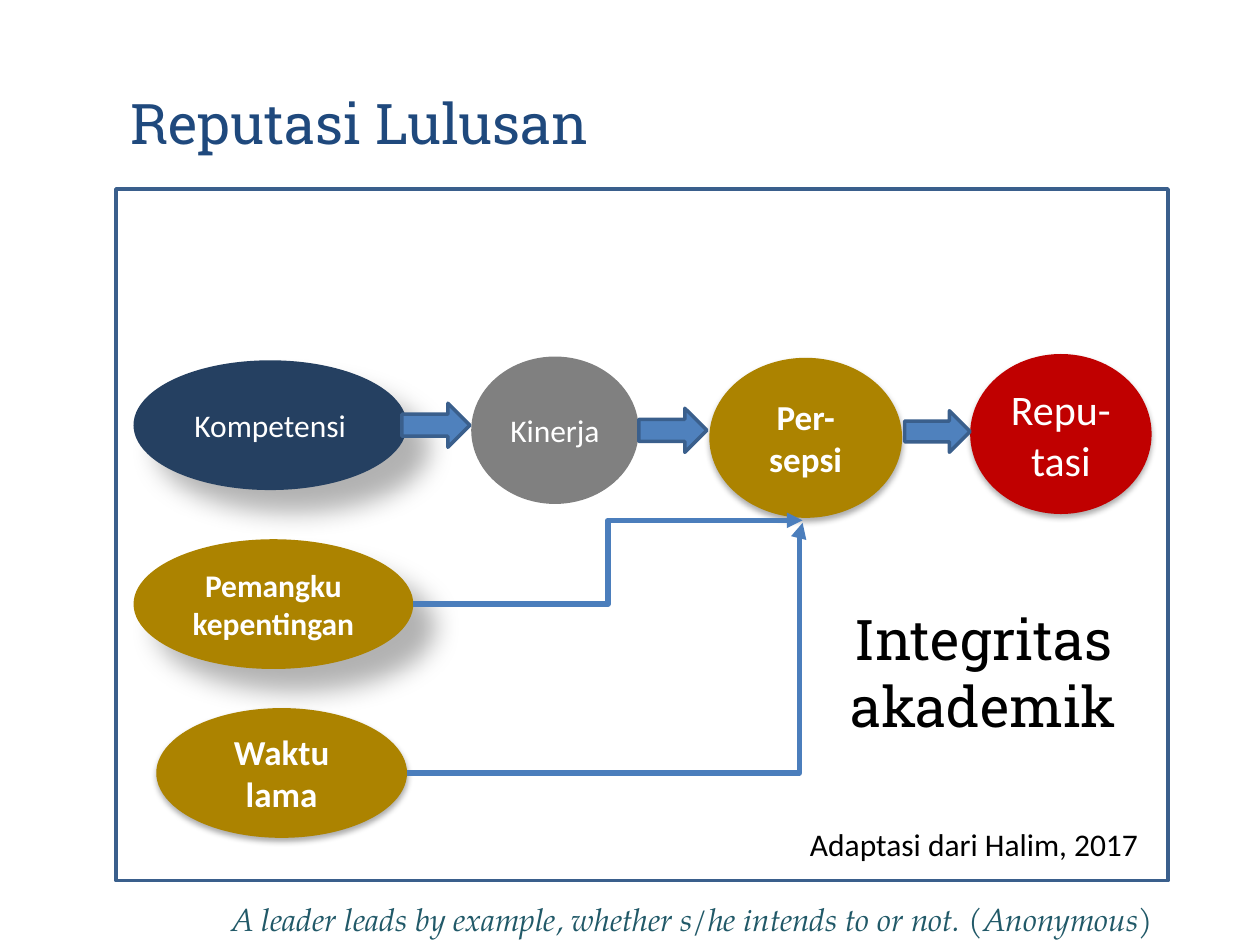
from dataclasses import dataclass

from pptx import Presentation
from pptx.dml.color import RGBColor
from pptx.enum.shapes import MSO_CONNECTOR as Connector, MSO_SHAPE as Shape
from pptx.enum.text import MSO_ANCHOR as Anchor, PP_ALIGN as Align
from pptx.oxml.ns import qn
from pptx.util import Inches, Pt
from lxml.etree import SubElement

SLIDE_WIDTH, SLIDE_HEIGHT = Inches(10), Inches(7.5)
COLUMN, ROW = SLIDE_WIDTH // 100, SLIDE_HEIGHT // 75

WHITE = RGBColor(0xFF, 0xFF, 0xFF)
BLACK = RGBColor(0, 0, 0)
TITLE_BLUE = RGBColor(0x1F, 0x49, 0x7D)
NAVY = RGBColor(0x25, 0x40, 0x61)
GOLD = RGBColor(0xAC, 0x83, 0x00)
GREY = RGBColor(0x80, 0x80, 0x80)
RED = RGBColor(0xC0, 0x00, 0x00)
ARROW_BLUE = RGBColor(0x4F, 0x81, 0xBD)
EDGE_BLUE = RGBColor(0x3A, 0x5F, 0x8C)
LINK_BLUE = RGBColor(0x4B, 0x7E, 0xBC)
TEAL = RGBColor(0x21, 0x59, 0x68)

SANS, SLAB, SERIF = "Calibri", "Roboto Slab", "TeX Gyre Pagella"
# opacity %, blur pt, distance pt, direction in degrees
FAR_SHADOW = (30, 15, 18, 45)
NEAR_SHADOW = (32, 3.5, 2.2, 90)


@dataclass
class Box:
    """An area in grid columns and rows."""
    left: float
    top: float
    width: float
    height: float

    def inner(self, left, top, width, height):
        return Box(self.left + left, self.top + top, width, height)

    def point(self, across, down):
        """The point at the given shares of the width and height."""
        return (self.left + across * self.width, self.top + down * self.height)

    def emu(self):
        return (round(self.left * COLUMN), round(self.top * ROW),
                round(self.width * COLUMN), round(self.height * ROW))


def write(frame, words, size, color, font=SANS, align=Align.LEFT, **styles):
    paragraph = frame.paragraphs[0]
    paragraph.alignment = align
    run = paragraph.add_run()
    run.text = words
    run.font.color.rgb = color
    for key, value in dict(size=Pt(size), name=font, **styles).items():
        setattr(run.font, key, value)
    return paragraph


def add_text(slide, box, words, size, color, wrap=True, anchor=Anchor.TOP, **styles):
    frame = slide.shapes.add_textbox(*box.emu()).text_frame
    frame.word_wrap = wrap
    frame.vertical_anchor = anchor
    return write(frame, words, size, color, **styles)


def add_figure(slide, kind, box, fill=None, edge=None):
    figure = slide.shapes.add_shape(kind, *box.emu())
    figure.shadow.inherit = False
    if fill is None:
        figure.fill.background()
    else:
        figure.fill.solid()
        figure.fill.fore_color.rgb = fill
    if edge is None:
        figure.line.fill.background()
    else:
        figure.line.color.rgb = edge
        figure.line.width = Pt(2)
    return figure


def cast_shadow(figure, opacity, blur, distance, direction):
    effects = figure._element.spPr.find(qn("a:effectLst"))
    shadow = SubElement(effects, qn("a:outerShdw"), blurRad=str(Pt(blur)),
                        dist=str(Pt(distance)), dir=str(direction * 60000),
                        algn="ctr", rotWithShape="0")
    color = SubElement(shadow, qn("a:srgbClr"), val=str(BLACK))
    SubElement(color, qn("a:alpha"), val=str(opacity * 1000))


def add_stage(slide, box, words, size, fill, bold=False, shadow=None):
    stage = add_figure(slide, Shape.OVAL, box, fill)
    if shadow:
        cast_shadow(stage, *shadow)
    stage.text_frame.word_wrap = True
    stage.text_frame.vertical_anchor = Anchor.MIDDLE
    write(stage.text_frame, words, size, WHITE, align=Align.CENTER, bold=bold)


def add_elbow(slide, start, end, bend):
    """Bent arrow that turns at the share `bend` of its width."""
    ends = [round(value * unit) for point in (start, end)
            for value, unit in zip(point, (COLUMN, ROW))]
    elbow = slide.shapes.add_connector(Connector.ELBOW, *ends)
    elbow.line.color.rgb = LINK_BLUE
    elbow.line.width = Pt(3)
    properties = elbow._element.spPr
    SubElement(properties.find(qn("a:ln")), qn("a:tailEnd"), type="triangle")
    SubElement(properties, qn("a:effectLst"))
    adjustments = properties.find(qn("a:prstGeom")).find(qn("a:avLst"))
    SubElement(adjustments, qn("a:gd"), name="adj1", fmla=f"val {round(bend * 100000)}")


def add_reputation_flow(slide, frame):
    add_figure(slide, Shape.RECTANGLE, frame, edge=EDGE_BLUE)

    competence = frame.inner(1.4, 13.6, 21.7, 10.3)
    stakeholders = frame.inner(1.4, 27.8, 22.2, 10.3)
    long_time = frame.inner(3.2, 41.2, 19.9, 10.3)
    performance = frame.inner(28.2, 13.3, 13.3, 11.7)
    perception = frame.inner(47.1, 13.4, 15.3, 12.7)
    reputation = frame.inner(67.8, 13.1, 14.4, 12.7)
    for box, words, size, fill, bold, shadow in (
        (competence, "Kompetensi", 18, NAVY, False, FAR_SHADOW),
        (stakeholders, "Pemangku kepentingan", 18, GOLD, True, FAR_SHADOW),
        (long_time, "Waktu lama", 20, GOLD, True, NEAR_SHADOW),
        (performance, "Kinerja", 18, GREY, False, None),
        (perception, "Per-sepsi", 20, GOLD, True, NEAR_SHADOW),
        (reputation, "Repu-tasi", 24, RED, False, NEAR_SHADOW),
    ):
        add_stage(slide, box, words, size, fill, bold, shadow)

    below_perception = frame.inner(54.5, 26.3, 0, 0.2)
    add_elbow(slide, stakeholders.point(1, 0.5), below_perception.point(0, 0), 0.5)
    add_elbow(slide, long_time.point(1, 0.5), below_perception.point(0, 1), 0.992)

    for arrow in ((22.7, 17, 5.4, 3.5), (41.5, 17.4, 5.4, 3.5), (62.6, 17.6, 5.2, 3.3)):
        add_figure(slide, Shape.RIGHT_ARROW, frame.inner(*arrow), ARROW_BLUE, EDGE_BLUE)

    add_text(slide, frame.inner(55.8, 32.5, 26.1, 11.8), "Integritas akademik", 32,
             BLACK, font=SLAB, align=Align.CENTER)
    add_text(slide, frame.inner(54.1, 50, 28.9, 4), "Adaptasi dari Halim, 2017", 18,
             BLACK, wrap=False)


def add_title(slide, box):
    add_text(slide, box, "Reputasi Lulusan", 32, TITLE_BLUE, font=SLAB,
             anchor=Anchor.MIDDLE)


def add_quote(slide, box):
    quote = add_text(
        slide, box,
        "A leader leads by example, whether s/he intends to or not. (Anonymous)",
        18, TEAL, font=SERIF, align=Align.RIGHT, italic=True)
    quote.line_spacing = 0.9
    hanging = Inches(0.67)
    properties = quote._p.get_or_add_pPr()
    properties.set("marL", str(hanging))
    properties.set("indent", str(-hanging))


def main():
    deck = Presentation()
    deck.slide_width, deck.slide_height = SLIDE_WIDTH, SLIDE_HEIGHT
    slide = deck.slides.add_slide(deck.slide_layouts[6])
    add_title(slide, Box(9.4, 2.3, 81, 14.8))
    add_reputation_flow(slide, Box(9.2, 15, 83.5, 54.9))
    add_quote(slide, Box(9.2, 71.3, 83.3, 3.7))
    deck.save("out.pptx")


if __name__ == "__main__":
    main()
